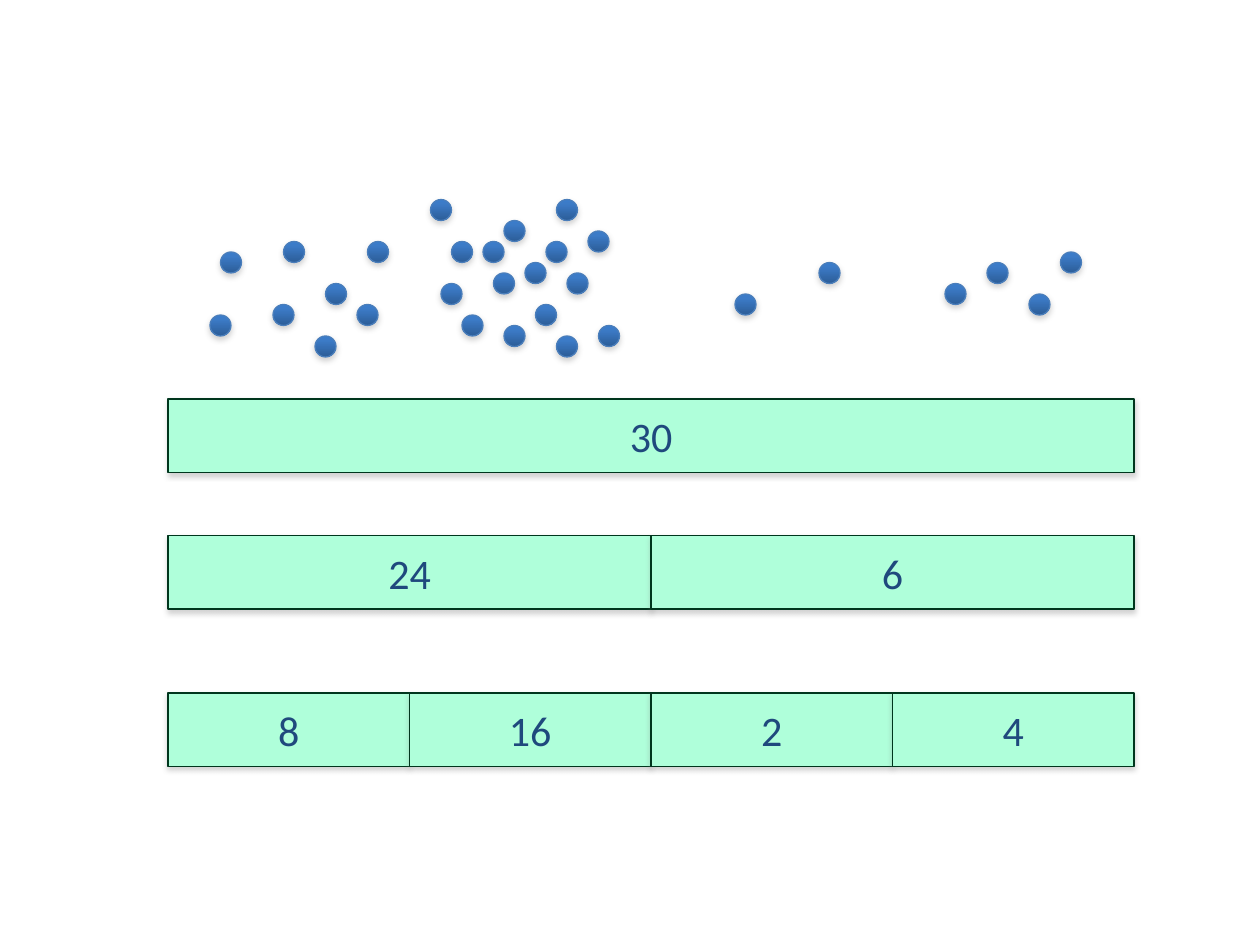
import pptx
import pptx.util
import pptx.oxml
import pptx.oxml.ns
import pptx.dml.color
import pptx.enum.shapes
import pptx.enum.text

BAR_ROWS = [
    (304, ["30"]),
    (408, ["24", "6"]),
    (528, ["8", "16", "2", "4"]),
]
DOT_CLUSTERS = {
    "8": [(21, 24), (20, 30), (31, 27), (30, 32), (26, 29), (27, 23), (35, 23), (34, 29)],
    "16": [(51, 29), (44, 30), (52, 23), (47, 26), (46, 23), (56, 22), (48, 21), (54, 26),
           (42, 27), (57, 31), (48, 31), (41, 19), (50, 25), (53, 19), (53, 32), (43, 23)],
    "2": [(78, 25), (70, 28)],
    "4": [(90, 27), (98, 28), (101, 24), (94, 25)],
}
COLORS = {
    "bar": "AFFFDA", "bar_line": "00361D", "text": "1F497D", "dot_line": "4A7EBB",
    "dot_top": "3A7CCB", "dot_upper": "3C7BC7", "dot_bottom": "2C5D98", "shadow": "808080",
}
DOT_STOPS = [(0, "dot_top"), (20, "dot_upper"), (100, "dot_bottom")]
TEXT_FORMAT = {"name": "Calibri", "size": pptx.util.Pt(24)}
EMU_PER_PX = 9525
SLIDE_WIDTH, SLIDE_HEIGHT = 960, 720
BAR_LEFT, BAR_WIDTH, BAR_HEIGHT = 128, 736, 56
DOT_GRID, DOT_SIZE = 8, 16
NAMESPACE = pptx.oxml.ns.nsdecls("a")


def emu(*lengths):
    return [length * EMU_PER_PX for length in lengths]


def color(name):
    return pptx.dml.color.RGBColor.from_string(COLORS[name])


def finish(shape, line_name):
    shape.line.color.rgb = color(line_name)
    shape.line.width = pptx.util.Pt(0.75)
    shape.shadow.inherit = False
    shadow = pptx.oxml.parse_xml(
        f'<a:outerShdw {NAMESPACE} blurRad="40000" dist="23000" dir="5400000" rotWithShape="0">'
        f'<a:srgbClr val="{COLORS["shadow"]}"><a:alpha val="35000"/></a:srgbClr></a:outerShdw>')
    shape.element.spPr.find(pptx.oxml.ns.qn("a:effectLst")).append(shadow)


def add_bar(shapes, left, top, width, label):
    bar = shapes.add_shape(pptx.enum.shapes.MSO_SHAPE.RECTANGLE,
                           *emu(left, top, width, BAR_HEIGHT))
    bar.fill.solid()
    bar.fill.fore_color.rgb = color("bar")
    finish(bar, "bar_line")
    bar.text_frame.vertical_anchor = pptx.enum.text.MSO_ANCHOR.MIDDLE
    paragraph = bar.text_frame.paragraphs[0]
    paragraph.alignment = pptx.enum.text.PP_ALIGN.CENTER
    run = paragraph.add_run()
    run.text = label
    for attribute, value in TEXT_FORMAT.items():
        setattr(run.font, attribute, value)
    run.font.color.rgb = color("text")


def add_dot(shapes, column, row):
    dot = shapes.add_shape(pptx.enum.shapes.MSO_SHAPE.OVAL,
                           *emu(column * DOT_GRID, row * DOT_GRID, DOT_SIZE, DOT_SIZE))
    stops = "".join(f'<a:gs pos="{position * 1000}"><a:srgbClr val="{COLORS[name]}"/></a:gs>'
                    for position, name in DOT_STOPS)
    gradient = pptx.oxml.parse_xml(
        f'<a:gradFill {NAMESPACE} rotWithShape="1"><a:gsLst>{stops}</a:gsLst>'
        '<a:lin ang="5400000" scaled="0"/></a:gradFill>')
    dot.element.spPr.find(pptx.oxml.ns.qn("a:prstGeom")).addnext(gradient)
    finish(dot, "dot_line")


def main():
    presentation = pptx.Presentation()
    presentation.slide_width, presentation.slide_height = emu(SLIDE_WIDTH, SLIDE_HEIGHT)
    slide = presentation.slides.add_slide(presentation.slide_layouts[6])
    for top, labels in BAR_ROWS:
        shapes = slide.shapes.add_group_shape().shapes if len(labels) > 1 else slide.shapes
        width = BAR_WIDTH // len(labels)
        for index, label in enumerate(labels):
            add_bar(shapes, BAR_LEFT + index * width, top, width, label)
    for cluster in DOT_CLUSTERS.values():
        for column, row in cluster:
            add_dot(slide.shapes, column, row)
    presentation.save("out.pptx")


if __name__ == "__main__":
    main()
